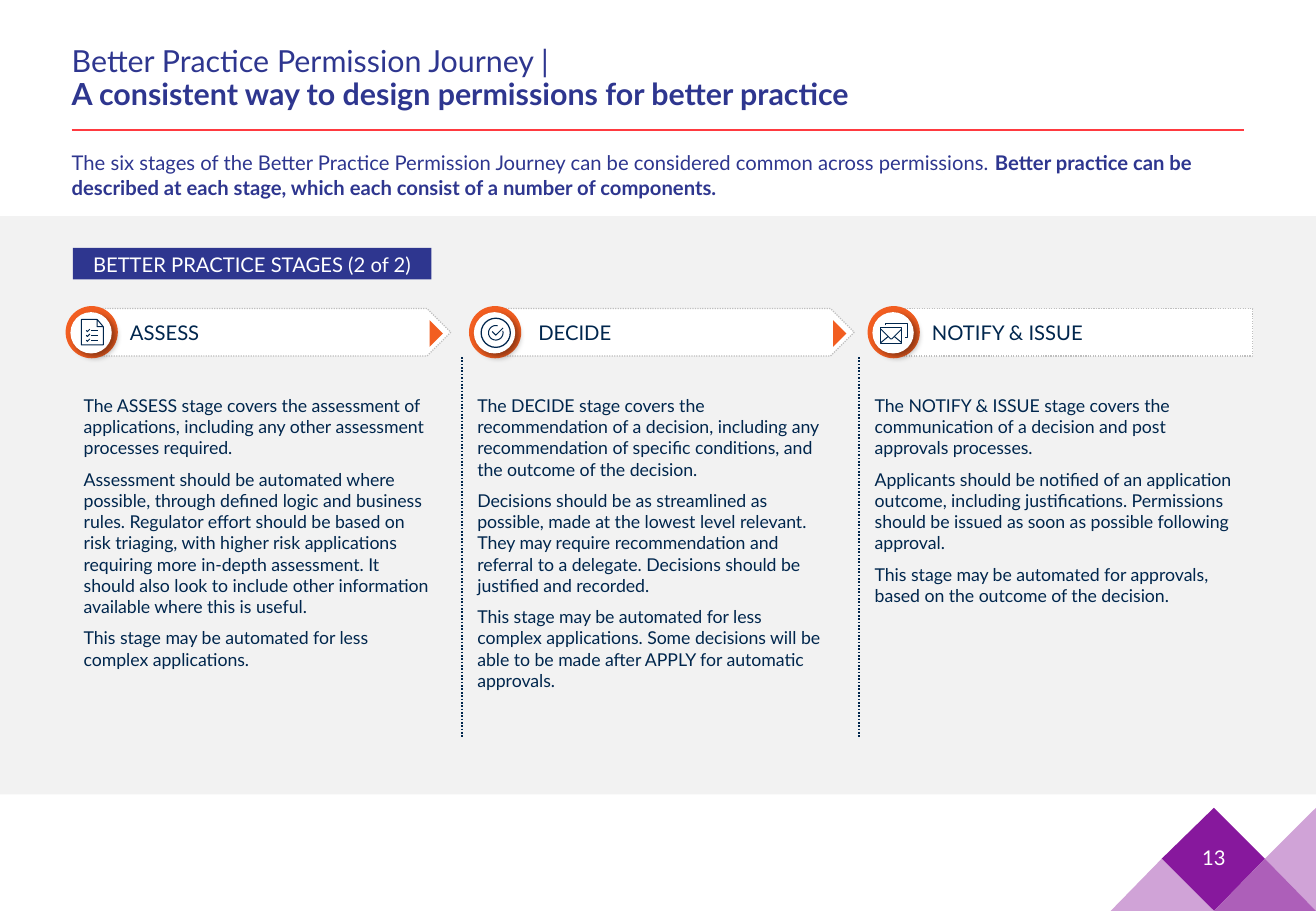
import copy
import math

from lxml import etree
from pptx import Presentation, util as u
from pptx.dml.color import RGBColor
from pptx.enum import dml, shapes, text
from pptx.oxml.ns import qn

COLOURS = {
    "indigo": "2E368F", "navy": "00264D", "orange": "F25E21", "red": "FF3A40",
    "white": "FFFFFF", "panel": "F2F2F2", "border": "BFBFBF",
    "purple": "87189D", "lilac": "D0A3D7", "mauve": "AD5FB9",
}
DOTTED = dml.MSO_LINE.ROUND_DOT
SHAPE = shapes.MSO_SHAPE
MIDDLE = text.MSO_ANCHOR.MIDDLE
CENTER = text.PP_ALIGN.CENTER


def colour(name):
    return RGBColor.from_string(COLOURS[name])


def write(shape, paragraphs, size=12, color="navy", align=text.PP_ALIGN.LEFT,
          anchor=text.MSO_ANCHOR.TOP, insets=(0.1, 0.05, 0.1, 0.05),
          gap=0, spacing=None, wrap=True):
    """Each paragraph is a string or a list of (text, bold) runs; "\\n" as a run breaks the line."""
    frame = shape.text_frame
    frame.word_wrap = wrap
    frame.auto_size = text.MSO_AUTO_SIZE.NONE
    frame.vertical_anchor = anchor
    (frame.margin_left, frame.margin_top,
     frame.margin_right, frame.margin_bottom) = map(u.Inches, insets)
    for index, runs in enumerate(paragraphs):
        paragraph = frame.paragraphs[0] if index == 0 else frame.add_paragraph()
        paragraph.alignment = align
        paragraph.line_spacing = spacing
        if index and gap:
            paragraph.space_before = u.Pt(gap)
        for words, bold in [(runs, False)] if isinstance(runs, str) else runs:
            if words == "\n":
                paragraph.add_line_break()
                paragraph._p[-1].append(copy.deepcopy(run._r.rPr))
                continue
            run = paragraph.add_run()
            run.text = words
            run.font.name = "Lato"
            run.font.size = u.Pt(size)
            run.font.bold = bold
            run.font.color.rgb = colour(color)


class Page:
    def __init__(self, deck):
        self.slide = deck.slides.add_slide(deck.slide_layouts[5])
        self.items = self.slide.shapes

    def style(self, shape, fill, line, width, dash):
        shape.shadow.inherit = False
        if fill:
            shape.fill.solid()
            shape.fill.fore_color.rgb = colour(fill)
        else:
            shape.fill.background()
        if line:
            self.stroke(shape.line, line, width, dash)
        else:
            shape.line.fill.background()
        return shape

    def stroke(self, line, color, width, dash):
        line.color.rgb = colour(color)
        line.width = u.Pt(width)
        if dash:
            line.dash_style = dash

    def title(self, box, paragraphs, **form):
        title = self.items.title
        title.left, title.top, title.width, title.height = map(u.Inches, box)
        write(title, paragraphs, **form)

    def text(self, box, paragraphs, **form):
        write(self.items.add_textbox(*map(u.Inches, box)), paragraphs, **form)

    def shape(self, kind, box, fill=None, line=None, width=0.75, dash=None):
        shape = self.items.add_shape(kind, *map(u.Inches, box))
        return self.style(shape, fill, line, width, dash)

    def outline(self, points, fill=None, line=None, width=0.75, close=True):
        points = [(u.Inches(x), u.Inches(y)) for x, y in points]
        builder = self.items.build_freeform(*points[0])
        builder.add_line_segments(points[1:], close=close)
        return self.style(builder.convert_to_shape(), fill, line, width, None)

    def line(self, start, end, color, width, dash=None):
        rule = self.items.add_connector(
            shapes.MSO_CONNECTOR.STRAIGHT, *map(u.Inches, start + end))
        self.stroke(rule.line, color, width, dash)
        etree.SubElement(rule._element.spPr, qn("a:effectLst"))

    def cast_shadow(self, shape):
        effects = shape._element.spPr.find(qn("a:effectLst"))
        shadow = etree.SubElement(effects, qn("a:outerShdw"), blurRad=str(u.Pt(4)),
                                  dist=str(u.Pt(3)), dir="2700000", algn="tl", rotWithShape="0")
        black = etree.SubElement(shadow, qn("a:srgbClr"), val="000000")
        etree.SubElement(black, qn("a:alpha"), val="40000")

    def glyph(self, x, y, strokes, width):
        """Draw open strokes given as offsets from the centre (x, y)."""
        for points in strokes:
            self.outline([(x + dx, y + dy) for dx, dy in points],
                         line="navy", width=width, close=False)


CHECKLIST = [
    [(0.04, -0.11), (-0.09, -0.11), (-0.09, 0.1), (0.09, 0.1), (0.09, -0.05),
     (0.04, -0.11), (0.04, -0.05), (0.09, -0.05)],
]
for row in (-0.02, 0.02, 0.06):
    CHECKLIST += [[(-0.01, row), (0.05, row)],
                  [(-0.05, row), (-0.04, row + 0.01), (-0.02, row - 0.01)]]

ARC = [math.radians(angle) for angle in range(-15, -316, -15)]
TICK = [
    [(0.06 * math.cos(a), 0.06 * math.sin(a)) for a in (-b - math.pi / 6 for b in ARC)],
    [(-0.03, -0.01), (0, 0.02), (0.06, -0.04)],
]
ENVELOPES = [
    [(-0.11, -0.04), (0.06, -0.04), (0.06, 0.09), (-0.11, 0.09), (-0.11, -0.04)],
    [(-0.11, -0.03), (-0.03, 0.05), (-0.02, 0.05), (0.06, -0.03)],
    [(-0.11, 0.08), (-0.05, 0.03)],
    [(0.06, 0.08), (0, 0.03)],
    [(-0.07, -0.06), (-0.07, -0.08), (0.11, -0.08), (0.11, 0.04), (0.09, 0.04)],
]

STAGES = [
    dict(name="ASSESS", left=0.54, indent=0.31, body=(0.59, 3.05), icon=CHECKLIST, paragraphs=[
        "The ASSESS stage covers the assessment of applications, including any other assessment processes required.",
        "Assessment should be automated where possible, through defined logic and business rules. Regulator effort should be based on risk triaging, with higher risk applications requiring more in-depth assessment. It should also look to include other information available where this is useful.",
        "This stage may be automated for less complex applications."]),
    dict(name="DECIDE", left=3.86, indent=0.35, body=(3.83, 3.06), icon=TICK, paragraphs=[
        "The DECIDE stage covers the recommendation of a decision, including any recommendation of specific conditions, and the outcome of the decision.",
        "Decisions should be as streamlined as possible, made at the lowest level relevant. They may require recommendation and referral to a delegate. Decisions should be justified and recorded.",
        "This stage may be automated for less complex applications. Some decisions will be able to be made after APPLY for automatic approvals."]),
    dict(name="NOTIFY & ISSUE", left=7.14, indent=0.31, body=(7.1, 3.15), icon=ENVELOPES, paragraphs=[
        "The NOTIFY & ISSUE stage covers the communication of a decision and post approvals processes.",
        "Applicants should be notified of an application outcome, including justifications. Permissions should be issued as soon as possible following approval.",
        "This stage may be automated for approvals, based on the outcome of the decision."]),
]


def draw_stage(page, stage, is_last):
    left = stage["left"]
    banner = page.shape(SHAPE.PENTAGON, (left + 0.22, 2.54, 2.95, 0.39),
                        "white", "border", dash=DOTTED)
    write(banner, [stage["name"]], anchor=MIDDLE, insets=(stage["indent"], 0.04, 0.1, 0.04))
    if is_last:
        banner.adjustments[0] = 0
    else:
        arrow = page.shape(SHAPE.ISOSCELES_TRIANGLE, (left + 2.94, 2.69, 0.22, 0.11), "orange")
        arrow.rotation = 90
    page.shape(SHAPE.OVAL, (left, 2.52, 0.43, 0.43), "orange")
    page.cast_shadow(page.shape(SHAPE.OVAL, (left + 0.04, 2.57, 0.34, 0.34), "white"))
    if stage["icon"] is TICK:
        page.shape(SHAPE.OVAL, (left + 0.1, 2.62, 0.24, 0.24), line="navy")
    page.glyph(left + 0.22, 2.74, stage["icon"], 0.6)
    body_left, body_width = stage["body"]
    page.text((body_left, 3.2, body_width, 3), stage["paragraphs"], size=10.5, gap=6)


def main():
    deck = Presentation()
    deck.slide_width, deck.slide_height = u.Inches(10.83), u.Inches(7.5)
    page = Page(deck)
    flush = (0, 0.05, 0, 0.05)

    page.line((0.59, 1.07), (10.24, 1.07), "red", 1.25)
    page.outline([(9.56, 7.07), (9.99, 6.65), (10.41, 7.07), (9.99, 7.5)], "purple")
    page.outline([(10.83, 6.65), (10.83, 7.5), (10.41, 7.07)], "lilac")
    page.outline([(9.56, 7.07), (9.99, 7.5), (9.14, 7.5)], "lilac")
    page.outline([(10.41, 7.07), (10.83, 7.5), (9.99, 7.5)], "mauve")
    page.text((9.75, 6.86, 0.48, 0.4), ["13"], color="white", align=CENTER, anchor=MIDDLE)

    page.shape(SHAPE.RECTANGLE, (0, 1.78, 10.83, 4.76), "panel")
    page.title((0.59, 0.32, 9.65, 0.65), [[
        ("Better Practice Permission Journey | ", False), ("\n", False),
        ("A consistent way to design permissions for better practice", True),
    ]], size=18, color="indigo", anchor=text.MSO_ANCHOR.BOTTOM, insets=flush, spacing=0.9)
    page.text((0.59, 1.19, 9.65, 0.5), [[
        ("The six stages of the Better Practice Permission Journey can be considered common across permissions. ", False),
        ("Better practice can be described at each stage, which each consist of a number of components.", True),
    ]], color="indigo", insets=flush)

    tag = page.shape(SHAPE.RECTANGLE, (0.6, 2.04, 2.95, 0.26), "indigo")
    write(tag, ["BETTER PRACTICE STAGES (2 of 2)"], color="white", align=CENTER,
          insets=(0.04,) * 4, wrap=False)
    for stage in STAGES:
        draw_stage(page, stage, stage is STAGES[-1])
    for x in (3.8, 7.07):
        page.line((x, 2.94), (x, 6.08), "navy", 1, DOTTED)
    deck.save("out.pptx")


if __name__ == "__main__":
    main()
